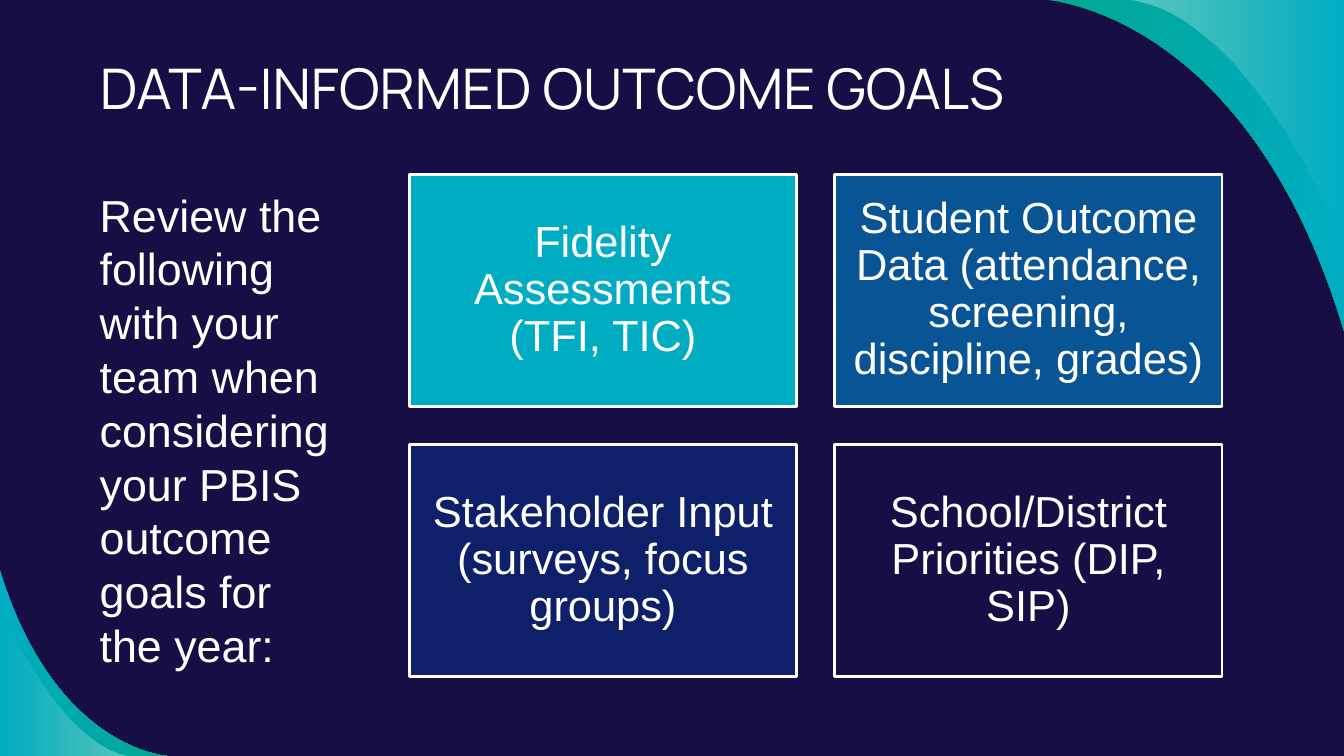
from lxml.etree import SubElement
from pptx import Presentation
from pptx.dml.color import RGBColor
from pptx.enum.shapes import MSO_SHAPE
from pptx.enum.text import MSO_ANCHOR, PP_ALIGN
from pptx.oxml.ns import qn
from pptx.util import Inches, Pt

COLORS = {
    "night": "160E44",
    "shade": "12102F",
    "white": "FFFFFF",
    "aqua": "00ACC2",
    "green": "00A791",
    "blue": "095494",
    "navy": "0E206A",
}
GOALS = [
    ("Fidelity Assessments (TFI, TIC)", "aqua"),
    ("Student Outcome Data (attendance, screening, discipline, grades)", "blue"),
    ("Stakeholder Input (surveys, focus groups)", "navy"),
    ("School/District Priorities (DIP, SIP)", "night"),
]
W, H = 13.33, 7.5


def rgb(name):
    return RGBColor.from_string(COLORS[name])


def write(sp, text, font="Arial", size=32, align=PP_ALIGN.LEFT,
          anchor=MSO_ANCHOR.TOP, spacing=1.0, inset=(0.1, 0.05)):
    tf = sp.text_frame
    tf.word_wrap = True
    tf.vertical_anchor = anchor
    tf.margin_left = tf.margin_right = Inches(inset[0])
    tf.margin_top = tf.margin_bottom = Inches(inset[1])
    p = tf.paragraphs[0]
    p.alignment = align
    p.line_spacing = spacing
    r = p.add_run()
    r.text = text
    r.font.name = font
    r.font.size = Pt(size)
    r.font.color.rgb = rgb("white")


def bend_first_edge(sp):
    outline = next(sp._element.iter(qn("a:pathLst")))[0]
    edges = outline.findall(qn("a:lnTo"))[:3]
    bezier = SubElement(outline, qn("a:cubicBezTo"))
    edges[0].addprevious(bezier)
    for edge in edges:
        bezier.append(edge[0])
        outline.remove(edge)


def add_swoosh(s, bend, corner, stops):
    points = [(Inches(x), Inches(y)) for x, y in (*bend, corner)]
    builder = s.shapes.build_freeform(*points[0], scale=1.0)
    builder.add_line_segments(points[1:], close=True)
    sp = builder.convert_to_shape()
    bend_first_edge(sp)
    sp.shadow.inherit = False
    sp.line.fill.background()
    if len(stops) == 1:
        sp.fill.solid()
        sp.fill.fore_color.rgb = rgb(stops[0][0])
    else:
        sp.fill.gradient()
        sp.fill.gradient_angle = 0
        for stop, (name, _) in zip(sp.fill.gradient_stops, stops):
            stop.color.rgb = rgb(name)
    fill_colors = list(sp._element.spPr.iter(qn("a:srgbClr")))
    for element, (_, alpha) in zip(fill_colors, stops):
        if alpha < 100:
            SubElement(element, qn("a:alpha")).set("val", str(alpha * 1000))


def add_corners(s):
    teal = [("aqua", 100), ("green", 100)]
    glow = [("white", 0), ("white", 36)]
    top_right, bottom_left = (W, 0), (0, H)
    add_swoosh(s, ((W, 3.37), (12.35, 0.11), (10.31, 0), (10.31, 0)),
               top_right, [("shade", 54)])
    add_swoosh(s, ((10.38, 0), (10.38, 0), (12.38, 0.11), (W, 3.28)),
               top_right, teal[::-1])
    add_swoosh(s, ((W, 2.44), (W, 2.44), (12.42, 0.15), (11.18, 0)),
               top_right, glow[::-1])
    add_swoosh(s, ((1.66, H), (1.66, H), (0.54, 7.44), (0, 5.65)),
               bottom_left, teal)
    add_swoosh(s, ((0, 6.01), (0, 6.01), (0.56, 7.41), (1.32, H)),
               bottom_left, glow)


def add_title(s, text):
    sp = s.shapes.title
    sp.left, sp.top = Inches(0.89), Inches(0.51)
    sp.width, sp.height = Inches(10.26), Inches(0.92)
    write(sp, text, font="Manrope", size=40, spacing=0.9, inset=(0.1, 0.1))


def add_intro(s, text):
    sp = s.shapes.add_textbox(Inches(0.89), Inches(1.81), Inches(2.5), Inches(4.95))
    write(sp, text)


def add_goal_box(s, index, text, color):
    row, col = divmod(index, 2)
    sp = s.shapes.add_shape(
        MSO_SHAPE.RECTANGLE, Inches(4.06 + col * 4.22), Inches(1.73 + row * 2.68),
        Inches(3.84), Inches(2.3))
    sp.shadow.inherit = False
    sp.fill.solid()
    sp.fill.fore_color.rgb = rgb(color)
    sp.line.color.rgb = rgb("white")
    sp.line.width = Pt(2)
    write(sp, text, size=31, align=PP_ALIGN.CENTER, anchor=MSO_ANCHOR.MIDDLE,
          spacing=0.9, inset=(0.13, 0.13))


def main():
    prs = Presentation()
    prs.slide_width, prs.slide_height = Inches(W), Inches(H)
    s = prs.slides.add_slide(prs.slide_layouts[5])
    s.background.fill.solid()
    s.background.fill.fore_color.rgb = rgb("night")
    add_corners(s)
    add_title(s, "DATA-INFORMED OUTCOME GOALS")
    add_intro(s, "Review the following with your team when considering "
                 "your PBIS outcome goals for the year:")
    for index, (text, color) in enumerate(GOALS):
        add_goal_box(s, index, text, color)
    prs.save("out.pptx")


if __name__ == "__main__":
    main()
